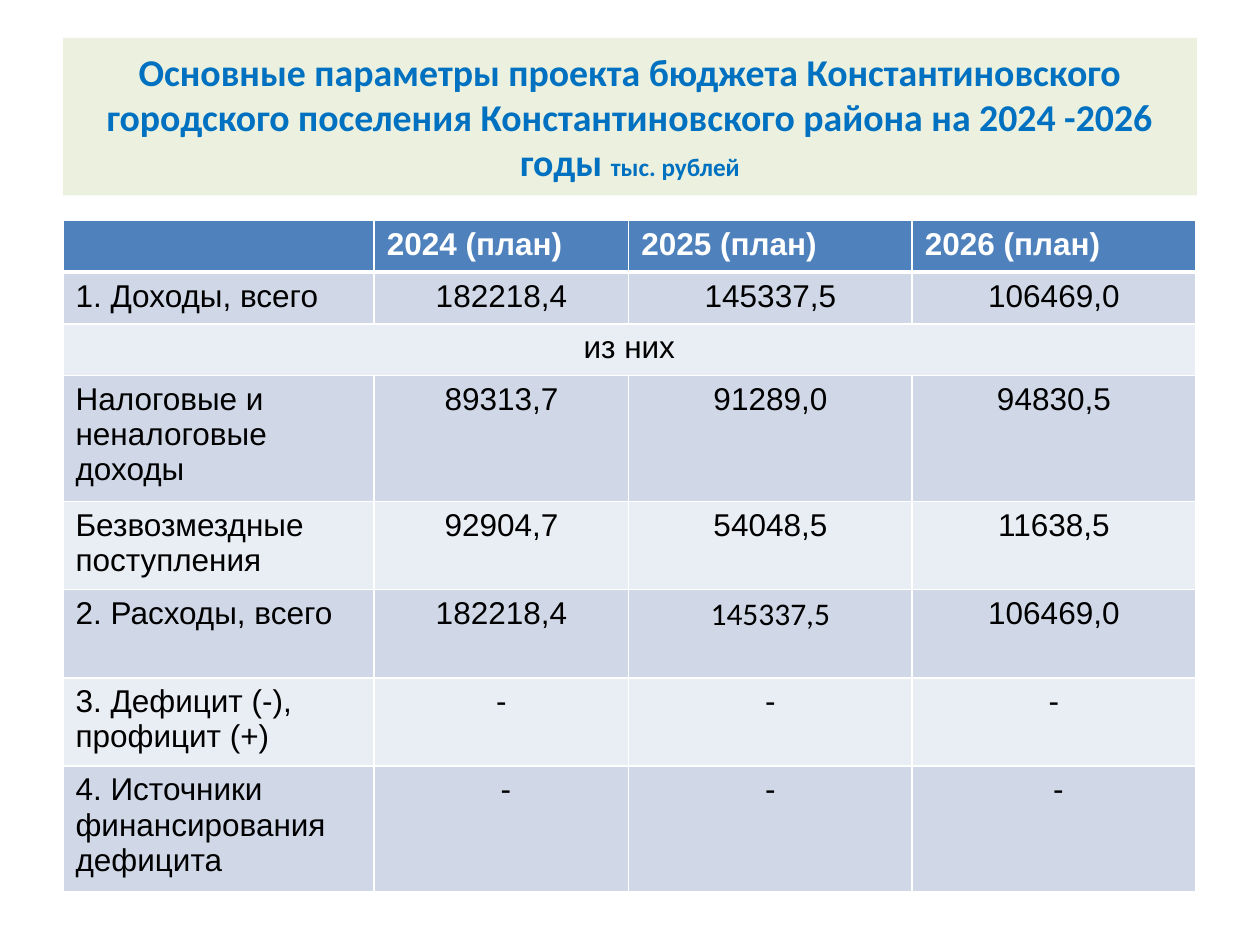
"""Build the slide with the main parameters of the 2024-2026 budget."""
from dataclasses import dataclass

from lxml.etree import SubElement
from pptx import Presentation
from pptx.dml.color import RGBColor
from pptx.enum.text import MSO_ANCHOR, MSO_AUTO_SIZE, PP_ALIGN
from pptx.oxml.ns import qn
from pptx.util import Inches, Pt

COLORS = {
    "title_fill": "EBF1DE", "title": "0070C0", "header": "4F81BD",
    "odd": "D0D8E8", "even": "E9EDF4", "white": "FFFFFF", "black": "000000",
}
PAGE_WIDTH, PAGE_HEIGHT = 10, 7.5
MARGIN = 0.05 * PAGE_WIDTH
COLUMN_WIDTHS = (2.47, 2.02, 2.25, 2.25)
ROW_HEIGHTS = {1: 0.41, 2: 0.7, 3: 1}


@dataclass(frozen=True)
class BudgetRow:
    label: str
    values: tuple[str, ...] = ()
    lines: int = 1
    fonts: tuple[str, ...] = ("Arial",) * 3


ROWS = (
    BudgetRow("", ("2024 (план)", "2025 (план)", "2026 (план)")),
    BudgetRow("1. Доходы, всего", ("182218,4", "145337,5", "106469,0")),
    BudgetRow("из них"),
    BudgetRow("Налоговые и неналоговые доходы", ("89313,7", "91289,0", "94830,5"), 3),
    BudgetRow("Безвозмездные поступления", ("92904,7", "54048,5", "11638,5"), 2),
    BudgetRow("2. Расходы, всего", ("182218,4", "145337,5", "106469,0"), 2,
              ("Arial", "Calibri", "Arial")),
    BudgetRow("3. Дефицит (-), профицит (+)", ("-", "-", "-"), 2),
    BudgetRow("4. Источники финансирования дефицита", (" -", "-", " -"), 3),
)


def color(name: str) -> RGBColor:
    return RGBColor.from_string(COLORS[name])


def add_span(para, text: str, size: float, font: str, ink: str, bold: bool) -> None:
    span = para.add_run()
    span.text = text
    span.font.size, span.font.name, span.font.bold = Pt(size), font, bold
    span.font.color.rgb = color(ink)


def draw_title(page) -> None:
    box = page.shapes.title
    box.left, box.top = Inches(MARGIN), Inches(0.04 * PAGE_HEIGHT)
    box.width, box.height = Inches(PAGE_WIDTH - 2 * MARGIN), Inches(1.25)
    box.fill.solid()
    box.fill.fore_color.rgb = color("title_fill")
    frame = box.text_frame
    frame.word_wrap, frame.auto_size = True, MSO_AUTO_SIZE.NONE
    frame.vertical_anchor = MSO_ANCHOR.MIDDLE
    para = frame.paragraphs[0]
    para.alignment = PP_ALIGN.CENTER
    add_span(para, "Основные параметры проекта бюджета Константиновского городского "
             "поселения Константиновского района на 2024 -2026 годы ",
             21.6, "Calibri", "title", True)
    add_span(para, "тыс. рублей", 14.4, "Calibri", "title", True)


def set_borders(cell, widths: dict[str, float]) -> None:
    properties = cell._tc.get_or_add_tcPr()
    for side, width in widths.items():
        line = SubElement(properties, qn(f"a:ln{side}"), w=str(Pt(width)))
        fill = SubElement(line, qn("a:solidFill"))
        SubElement(fill, qn("a:srgbClr"), val=COLORS["white"])


def draw_cell(cell, row: int, column: int, data: BudgetRow) -> None:
    header = row == 0
    set_borders(cell, {"L": 1, "R": 1, "T": 3 if row == 1 else 1, "B": 3 if header else 1})
    cell.fill.solid()
    cell.fill.fore_color.rgb = color("header" if header else "odd" if row % 2 else "even")
    cell.margin_left = cell.margin_right = Inches(0.1)
    cell.margin_top = cell.margin_bottom = Inches(0.05)
    texts = (data.label, *data.values)
    para = cell.text_frame.paragraphs[0]
    if not header and (column or not data.values):
        para.alignment = PP_ALIGN.CENTER
    if column < len(texts) and texts[column]:
        font = data.fonts[column - 1] if column else "Arial"
        add_span(para, texts[column], 18, font, "white" if header else "black", header)


def draw_table(page) -> None:
    heights = [ROW_HEIGHTS[data.lines] for data in ROWS]
    table = page.shapes.add_table(
        len(ROWS), len(COLUMN_WIDTHS), Inches(MARGIN), Inches(1.75),
        Inches(sum(COLUMN_WIDTHS)), Inches(sum(heights))).table
    for column, width in zip(table.columns, COLUMN_WIDTHS):
        column.width = Inches(width)
    for row, data in enumerate(ROWS):
        table.rows[row].height = Inches(heights[row])
        for column in range(len(COLUMN_WIDTHS)):
            draw_cell(table.cell(row, column), row, column, data)
        if not data.values:
            table.cell(row, 0).merge(table.cell(row, len(COLUMN_WIDTHS) - 1))


def main() -> None:
    deck = Presentation()
    deck.slide_width, deck.slide_height = Inches(PAGE_WIDTH), Inches(PAGE_HEIGHT)
    page = deck.slides.add_slide(deck.slide_layouts[5])
    draw_title(page)
    draw_table(page)
    deck.save("out.pptx")


if __name__ == "__main__":
    main()
